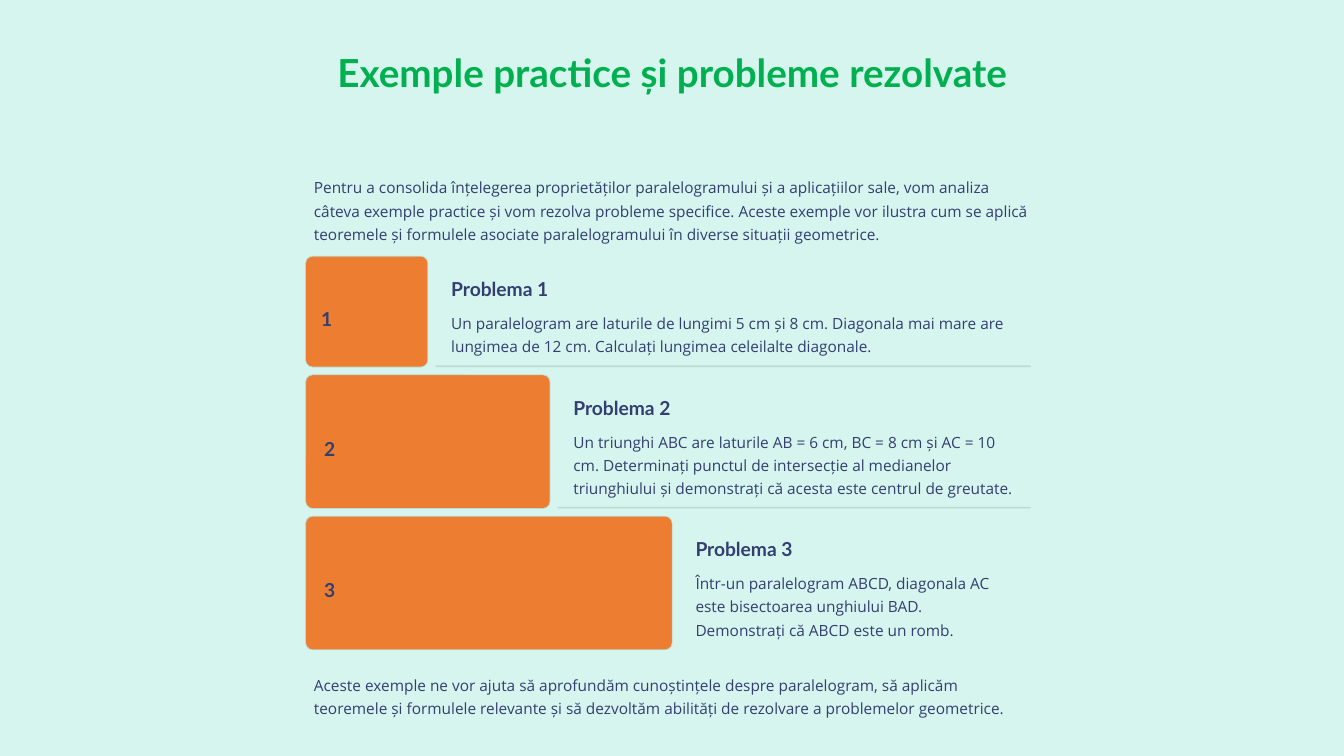
"""Builds the slide of worked parallelogram problems as three widening steps."""
import pptx
import pptx.util
import pptx.dml.color
import pptx.enum.shapes
import pptx.enum.text

Pt = pptx.util.Pt
ALIGN = pptx.enum.text.PP_ALIGN
COLORS = {
    "background": "D6F5EE",
    "title": "00B050",
    "text": "333F70",
    "step": "ED7D31",
    "rule": "BCDBD4",
}
LEFT, WIDTH = 262, 628.6
TEXT_RIGHT, RULE_RIGHT = 877, 883.6
STEP_WIDTH, STEP_GAP, CORNER = 104.7, 6.7, 6
NUMBER_HEIGHT = 24.5


def write(box, text, size, font, color, spacing, bold=False, align=ALIGN.LEFT, wrap=True):
    frame = box.text_frame
    frame.text = text
    frame.word_wrap = wrap
    frame.auto_size = pptx.enum.text.MSO_AUTO_SIZE.NONE
    frame.vertical_anchor = pptx.enum.text.MSO_ANCHOR.TOP
    paragraph = frame.paragraphs[0]
    paragraph.alignment = align
    paragraph.line_spacing = Pt(spacing)
    paragraph.font.size = Pt(size)
    paragraph.font.name = font
    paragraph.font.bold = bold
    paragraph.font.color.rgb = pptx.dml.color.RGBColor.from_string(COLORS[color])


def add_rounded(left, top, width, height, color, corner):
    shape = slide.shapes.add_shape(
        pptx.enum.shapes.MSO_SHAPE.ROUNDED_RECTANGLE, Pt(left), Pt(top), Pt(width), Pt(height))
    shape.adjustments[0] = corner / height
    shape.shadow.inherit = False
    shape.fill.solid()
    shape.fill.fore_color.rgb = pptx.dml.color.RGBColor.from_string(COLORS[color])
    shape.line.fill.background()
    return shape


presentation = pptx.Presentation()
presentation.slide_width = Pt(1152)
presentation.slide_height = Pt(648)
slide = presentation.slides.add_slide(presentation.slide_layouts[5])
slide.background.fill.solid()
slide.background.fill.fore_color.rgb = pptx.dml.color.RGBColor.from_string(COLORS["background"])

title = slide.shapes.title
title.left, title.top, title.width, title.height = Pt(LEFT), Pt(36.7), Pt(WIDTH), Pt(82.8)
write(title, "Exemple practice și probleme rezolvate", 33.1, "Lato", "title", 41.4,
      bold=True, align=ALIGN.CENTER)

framing_texts = [
    (145.4, 59.8, "Pentru a consolida înțelegerea proprietăților paralelogramului și a aplicațiilor "
     "sale, vom analiza câteva exemple practice și vom rezolva probleme specifice. Aceste exemple "
     "vor ilustra cum se aplică teoremele și formulele asociate paralelogramului în diverse "
     "situații geometrice."),
    (571.7, 39.6, "Aceste exemple ne vor ajuta să aprofundăm cunoștințele despre paralelogram, să "
     "aplicăm teoremele și formulele relevante și să dezvoltăm abilități de rezolvare a "
     "problemelor geometrice."),
]
for top, height, text in framing_texts:
    passage = slide.shapes.add_textbox(Pt(LEFT), Pt(top), Pt(WIDTH), Pt(height))
    write(passage, text, 13.2, "Open Sans", "text", 19.9)

problems = [
    (95, 8.6, "Un paralelogram are laturile de lungimi 5 cm și 8 cm. Diagonala mai mare are "
     "lungimea de 12 cm. Calculați lungimea celeilalte diagonale."),
    (114.5, 13.7, "Un triunghi ABC are laturile AB = 6 cm, BC = 8 cm și AC = 10 cm. Determinați "
     "punctul de intersecție al medianelor triunghiului și demonstrați că acesta este centrul "
     "de greutate."),
    (114.5, 13.7, "Într-un paralelogram ABCD, diagonala AC este bisectoarea unghiului BAD. "
     "Demonstrați că ABCD este un romb."),
]
step_top = 219.6
for index, (height, number_width, statement) in enumerate(problems, start=1):
    step_right = LEFT + index * STEP_WIDTH
    text_left = step_right + 13

    step = add_rounded(LEFT, step_top, index * STEP_WIDTH, height, "step", CORNER)
    step.line.color.rgb = pptx.dml.color.RGBColor.from_string(COLORS["rule"])
    step.line.width = Pt(0.6)

    number = slide.shapes.add_textbox(
        Pt(275.8), Pt(step_top + (height - NUMBER_HEIGHT) / 2), Pt(number_width), Pt(NUMBER_HEIGHT))
    write(number, str(index), 16.5, "Lato", "text", 24.8,
          bold=True, align=ALIGN.CENTER, wrap=False)

    heading = slide.shapes.add_textbox(Pt(text_left), Pt(step_top + 13.5), Pt(165.6), Pt(20.9))
    write(heading, f"Problema {index}", 16.5, "Lato", "text", 20.7, bold=True, wrap=False)

    body = slide.shapes.add_textbox(
        Pt(text_left), Pt(step_top + 42.2), Pt(TEXT_RIGHT - text_left), Pt(height - 55))
    write(body, statement, 13.2, "Open Sans", "text", 19.9)

    if index < len(problems):
        rule_left = step_right + 6.5
        add_rounded(rule_left, step_top + height - 1.4, RULE_RIGHT - rule_left, 1.4, "rule", 0.7)
    step_top += height + STEP_GAP

presentation.save("out.pptx")
